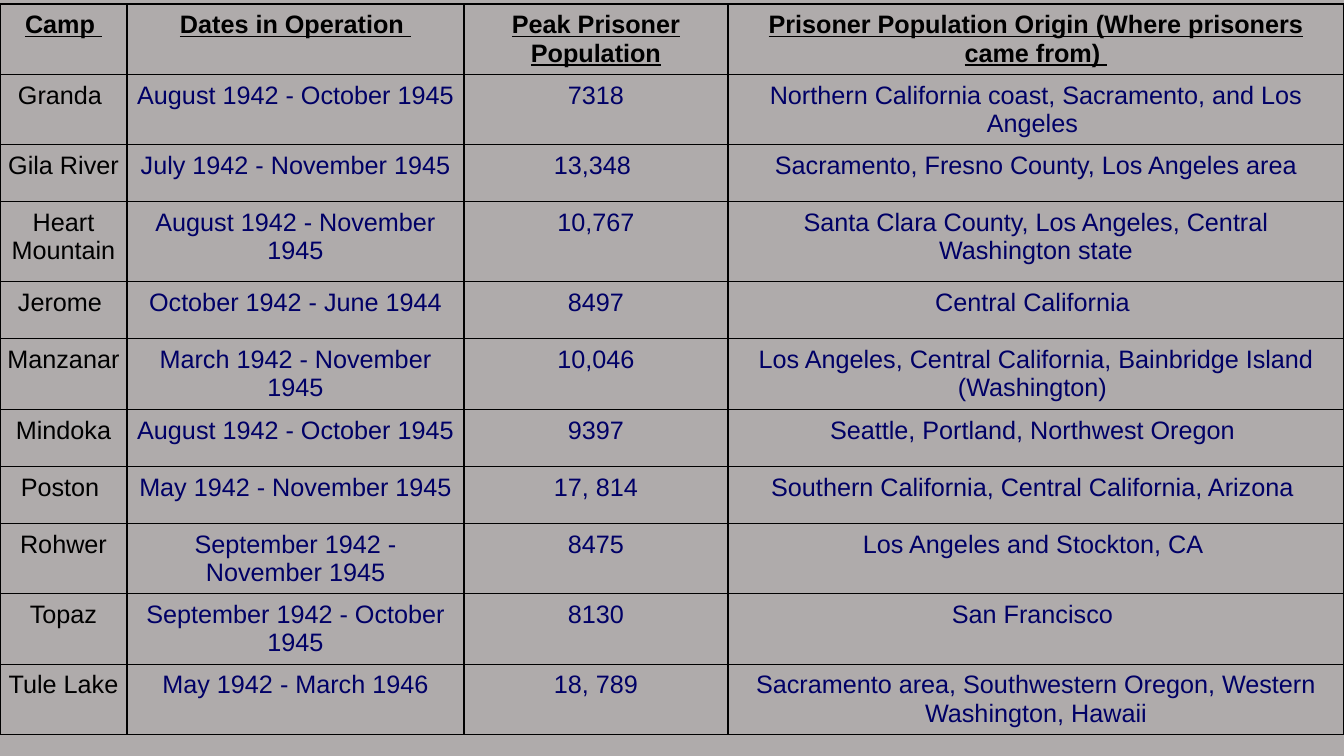
from dataclasses import dataclass

from lxml import etree
from pptx import Presentation
from pptx.dml.color import RGBColor
from pptx.enum.text import MSO_ANCHOR, PP_ALIGN
from pptx.oxml.ns import qn
from pptx.util import Emu, Pt

CENTER = PP_ALIGN.CENTER
TOP = MSO_ANCHOR.TOP
EMU_PER_PX = 914400 / 100.8


@dataclass(frozen=True)
class Theme:
    font: str = "Arial"
    size: int = 18
    background: str = "AFABAB"
    ink: str = "000000"
    detail: str = "000066"
    border: str = "000000"
    border_width: int = 1


THEME = Theme()
PAGE_WIDTH, PAGE_HEIGHT = 1344, 756
TABLE_TOP, TABLE_HEIGHT = 4, 752
CELL_INSET = 7
COLUMN_WIDTHS = [127, 337, 264, 616]
HEADER_HEIGHT, ROW_HEIGHT, TALL_ROW_HEIGHT = 21, 57, 80
TALL_CAMP = "Heart Mountain"

HEADER = [
    "Camp ",
    "Dates in Operation ",
    "Peak Prisoner Population",
    "Prisoner Population Origin (Where prisoners came from) ",
]
CAMPS = [
    ["Granda ", "August 1942 - October 1945", "7318",
     "Northern California coast, Sacramento, and Los Angeles "],
    ["Gila River", "July 1942 - November 1945", "13,348 ",
     "Sacramento, Fresno County, Los Angeles area"],
    ["Heart Mountain", "August 1942 - November 1945", "10,767",
     "Santa Clara County, Los Angeles, Central Washington state"],
    ["Jerome ", "October 1942 - June 1944", "8497",
     "Central California "],
    ["Manzanar", "March 1942 - November 1945", "10,046",
     "Los Angeles, Central California, Bainbridge Island (Washington) "],
    ["Mindoka", "August 1942 - October 1945", "9397",
     "Seattle, Portland, Northwest Oregon "],
    ["Poston ", "May 1942 - November 1945", "17, 814",
     "Southern California, Central California, Arizona "],
    ["Rohwer", "September 1942 - November 1945", "8475",
     "Los Angeles and Stockton, CA "],
    ["Topaz", "September 1942 - October 1945", "8130",
     "San Francisco "],
    ["Tule Lake", "May 1942 - March 1946", "18, 789",
     "Sacramento area, Southwestern Oregon, Western Washington, Hawaii"],
]


def px(length):
    return Emu(round(length * EMU_PER_PX))


def set_background(page):
    fill = page.background.fill
    fill.solid()
    fill.fore_color.rgb = RGBColor.from_string(THEME.background)


def add_borders(cell):
    properties = cell._tc.get_or_add_tcPr()
    for side in ("lnL", "lnR", "lnT", "lnB"):
        line = etree.SubElement(properties, qn(f"a:{side}"), w=str(Pt(THEME.border_width)))
        fill = etree.SubElement(line, qn("a:solidFill"))
        etree.SubElement(fill, qn("a:srgbClr"), val=THEME.border)


def write_cell(cell, text, color, heading):
    cell.margin_left = cell.margin_right = px(CELL_INSET)
    cell.margin_top = cell.margin_bottom = px(CELL_INSET)
    cell.vertical_anchor = TOP
    add_borders(cell)
    cell.fill.background()
    para = cell.text_frame.paragraphs[0]
    para.alignment = CENTER
    span = para.add_run()
    span.text = text
    font = span.font
    font.name = THEME.font
    font.size = Pt(THEME.size)
    font.bold = heading
    font.underline = heading
    font.color.rgb = RGBColor.from_string(color)


def row_height(camp):
    return TALL_ROW_HEIGHT if camp == TALL_CAMP else ROW_HEIGHT


def add_camp_table(page):
    rows = [HEADER] + CAMPS
    frame = page.shapes.add_table(
        len(rows), len(COLUMN_WIDTHS), 0, px(TABLE_TOP), px(PAGE_WIDTH), px(TABLE_HEIGHT)
    )
    table = frame.table
    table.first_row = False
    table.horz_banding = False
    for column, width in zip(table.columns, COLUMN_WIDTHS):
        column.width = px(width)
    heights = [HEADER_HEIGHT] + [row_height(camp[0]) for camp in CAMPS]
    for row, height in zip(table.rows, heights):
        row.height = px(height)
    frame.height = px(TABLE_HEIGHT)
    for row_index, texts in enumerate(rows):
        heading = row_index == 0
        for column_index, text in enumerate(texts):
            color = THEME.ink if heading or column_index == 0 else THEME.detail
            write_cell(table.cell(row_index, column_index), text, color, heading)


def main():
    deck = Presentation()
    deck.slide_width = px(PAGE_WIDTH)
    deck.slide_height = px(PAGE_HEIGHT)
    page = deck.slides.add_slide(deck.slide_layouts[6])
    set_background(page)
    add_camp_table(page)
    deck.save("out.pptx")


if __name__ == "__main__":
    main()
